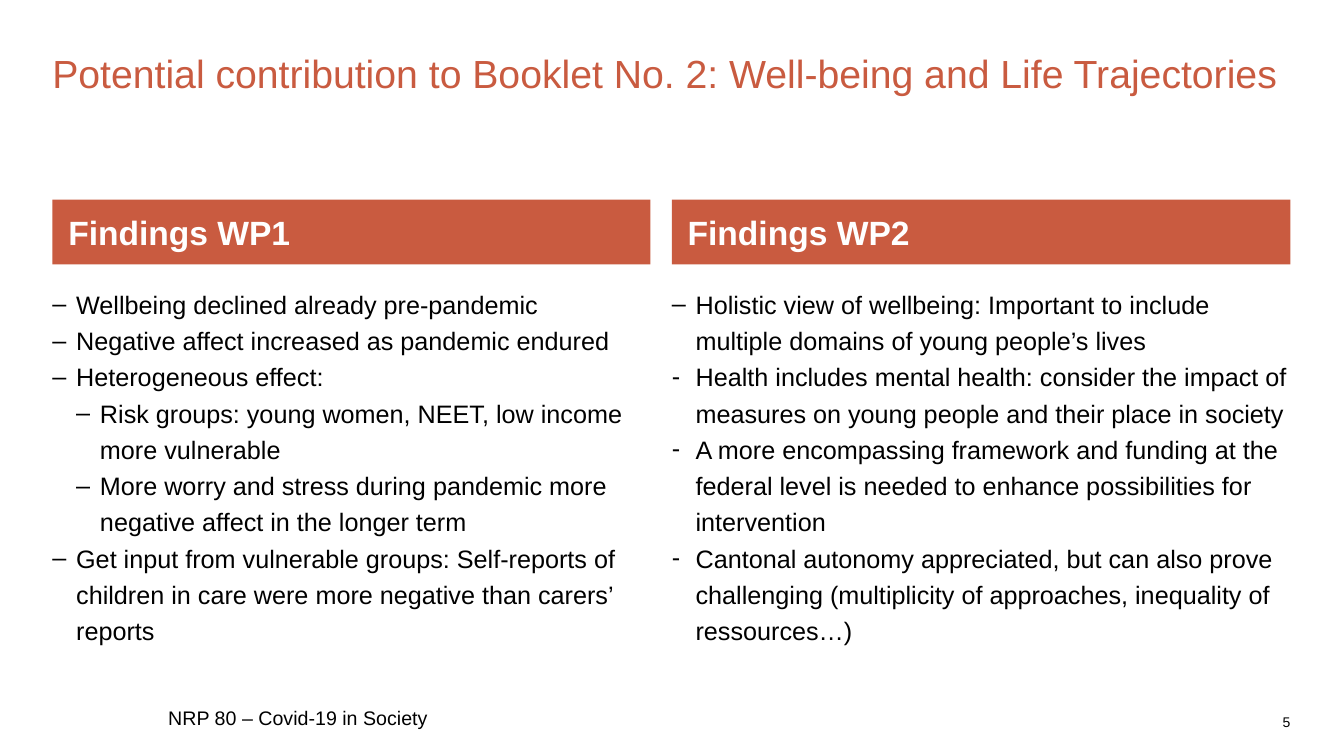
from dataclasses import dataclass

from lxml.etree import SubElement
from pptx import Presentation
from pptx.dml.color import RGBColor
from pptx.enum.text import MSO_ANCHOR as Anchor, MSO_AUTO_SIZE as AutoSize, PP_ALIGN as Align
from pptx.oxml.ns import qn
from pptx.util import Cm, Pt


@dataclass(frozen=True)
class Theme:
    font: str = "Arial"
    accent: RGBColor = RGBColor(0xC9, 0x5B, 0x40)
    text: RGBColor = RGBColor(0, 0, 0)
    light: RGBColor = RGBColor(0xFF, 0xFF, 0xFF)
    title_size: int = 28
    heading_size: int = 24
    body_size: int = 18
    footer_size: int = 14
    number_size: int = 10
    indent: float = 0.6


@dataclass(frozen=True)
class Box:
    left: float
    top: float
    width: float
    height: float


THEME = Theme()
TITLE = "Potential contribution to Booklet No. 2: Well-being and Life Trajectories"
FINDINGS_WP1 = [
    (0, "–", "Wellbeing declined already pre-pandemic"),
    (0, "–", "Negative affect increased as pandemic endured"),
    (0, "–", "Heterogeneous effect:"),
    (1, "–", "Risk groups: young women, NEET, low income more vulnerable"),
    (1, "–", "More worry and stress during pandemic more negative affect in the longer term"),
    (0, "–", "Get input from vulnerable groups: Self-reports of children in care "
             "were more negative than carers’ reports"),
]
FINDINGS_WP2 = [
    (0, "–", "Holistic view of wellbeing: Important to include multiple domains "
             "of young people’s lives"),
    (0, "-", "Health includes mental health: consider the impact of measures "
             "on young people and their place in society"),
    (0, "-", "A more encompassing framework and funding at the federal level is needed "
             "to enhance possibilities for intervention"),
    (0, "-", "Cantonal autonomy appreciated, but can also prove challenging "
             "(multiplicity of approaches, inequality of ressources…)"),
]


def apply(target, values):
    for name, value in values.items():
        setattr(target, name, value)


def place(shape, box, anchor=Anchor.TOP, insets=(0, 0, 0, 0)):
    apply(shape, {"left": Cm(box.left), "top": Cm(box.top),
                  "width": Cm(box.width), "height": Cm(box.height)})
    left, top, right, bottom = (Cm(inset) for inset in insets)
    apply(shape.text_frame, {
        "word_wrap": True, "auto_size": AutoSize.NONE, "vertical_anchor": anchor,
        "margin_left": left, "margin_top": top,
        "margin_right": right, "margin_bottom": bottom})


def write(paragraph, text, size, color, bold=False, align=Align.LEFT, line_spacing=1.0):
    apply(paragraph, {"alignment": align, "line_spacing": line_spacing,
                      "space_before": Pt(0), "space_after": Pt(0)})
    run = paragraph.add_run()
    run.text = text
    apply(run.font, {"name": THEME.font, "size": Pt(size), "bold": bold})
    run.font.color.rgb = color


def add_bullet(paragraph, level, mark):
    paragraph.level = level
    properties = paragraph._p.get_or_add_pPr()
    properties.set("marL", str(Cm(THEME.indent * (level + 1))))
    properties.set("indent", str(-Cm(THEME.indent)))
    SubElement(properties, qn("a:buFont"), typeface=THEME.font)
    SubElement(properties, qn("a:buChar"), char=mark)


def fill_title(shape, box):
    place(shape, box, insets=(0, 0.05, 0, 0))
    write(shape.text_frame.paragraphs[0], TITLE, THEME.title_size, THEME.accent,
          line_spacing=0.9)


def fill_column(heading, body, box, title, findings):
    heading_height, gap = 1.63, 0.47
    place(heading, Box(box.left, box.top, box.width, heading_height),
          Anchor.MIDDLE, (0.4, 0, 0.2, 0))
    heading.fill.solid()
    heading.fill.fore_color.rgb = THEME.accent
    write(heading.text_frame.paragraphs[0], title, THEME.heading_size, THEME.light, bold=True)

    offset = heading_height + gap
    place(body, Box(box.left, box.top + offset, box.width, box.height - offset))
    frame = body.text_frame
    for index, (level, mark, text) in enumerate(findings):
        paragraph = frame.add_paragraph() if index else frame.paragraphs[0]
        add_bullet(paragraph, level, mark)
        write(paragraph, text, THEME.body_size, THEME.text, line_spacing=1.2)


def add_footer(slide, box):
    number_width = 9.6
    parts = [
        ("NRP 80 – Covid-19 in Society", THEME.footer_size, Align.LEFT, Anchor.MIDDLE,
         Box(box.left + 2.92, box.top, 11.43, 0.71)),
        ("5", THEME.number_size, Align.RIGHT, Anchor.TOP,
         Box(box.left + box.width - number_width, box.top + 0.25, number_width, 0.51)),
    ]
    for text, size, align, anchor, area in parts:
        shape = slide.shapes.add_textbox(0, 0, 0, 0)
        place(shape, area, anchor)
        write(shape.text_frame.paragraphs[0], text, size, THEME.text, align=align)


def build_comparison(presentation):
    slide = presentation.slides.add_slide(presentation.slide_layouts[4])
    title, heading1, body1, heading2, body2 = slide.placeholders
    left, width, top, height = 1.32, 31.2, 5.03, 11.7
    fill_title(title, Box(left, 1.32, width, 2.9))
    fill_column(heading1, body1, Box(left, top, 15.07, height), "Findings WP1", FINDINGS_WP1)
    fill_column(heading2, body2, Box(16.93, top, 15.59, height), "Findings WP2", FINDINGS_WP2)
    add_footer(slide, Box(left, 17.73, width, 0.76))


def main():
    presentation = Presentation()
    apply(presentation, {"slide_width": Cm(33.87), "slide_height": Cm(19.05)})
    build_comparison(presentation)
    presentation.save("out.pptx")


if __name__ == "__main__":
    main()
